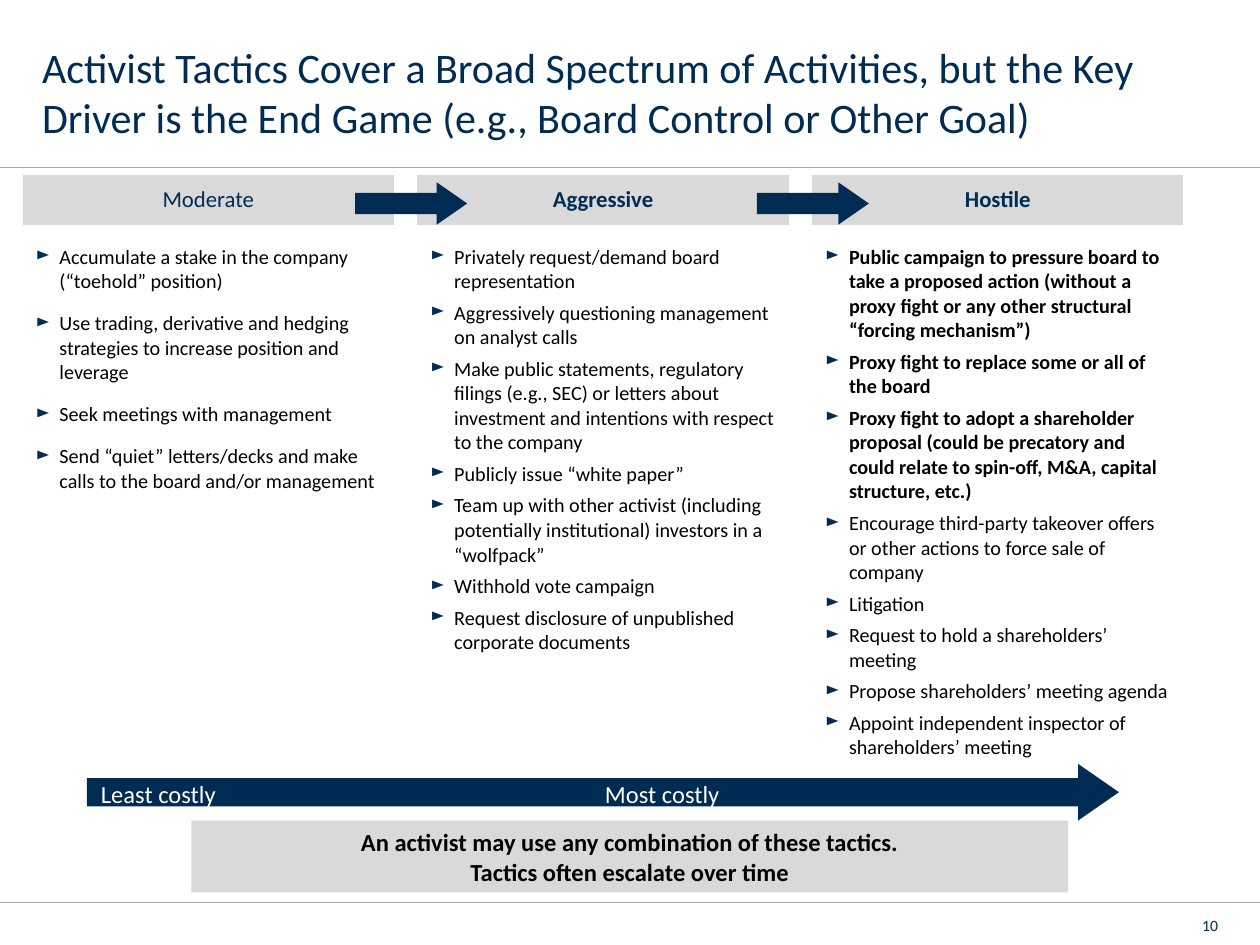
import dataclasses

import lxml.etree
import pptx
import pptx.dml.color
import pptx.enum.shapes
import pptx.enum.text
import pptx.oxml.ns
import pptx.util

Pt = pptx.util.Pt
Align = pptx.enum.text.PP_ALIGN
Anchor = pptx.enum.text.MSO_ANCHOR
Shapes = pptx.enum.shapes.MSO_SHAPE
qn = pptx.oxml.ns.qn

FONT = "Calibri"
COLORS = {"navy": "002C54", "gray": "D9D9D9", "rule": "A6A6A6", "black": "000000", "white": "FFFFFF"}
CELL_INSETS = (8, 4, 8, 4)


@dataclasses.dataclass(frozen=True)
class Box:
    left: float
    top: float
    width: float
    height: float

    def lengths(self) -> tuple:
        return tuple(Pt(value) for value in (self.left, self.top, self.width, self.height))


@dataclasses.dataclass(frozen=True)
class Style:
    size: float
    color: str
    bold: bool = False


@dataclasses.dataclass(frozen=True)
class Column:
    heading: str
    bullets: tuple[str, ...]
    heading_bold: bool = True
    bold_bullets: int = 0
    space_before: float = 0


COLUMNS = (
    Column("Moderate", (
        "Accumulate a stake in the company (“toehold” position)",
        "Use trading, derivative and hedging strategies to increase position and leverage",
        "Seek meetings with management",
        "Send “quiet” letters/decks and make calls to the board and/or management",
    ), heading_bold=False, space_before=6),
    Column("Aggressive", (
        "Privately request/demand board representation",
        "Aggressively questioning management on analyst calls",
        "Make public statements, regulatory filings (e.g., SEC) or letters about investment "
        "and intentions with respect to the company",
        "Publicly issue “white paper”",
        "Team up with other activist (including potentially institutional) investors in a “wolfpack”",
        "Withhold vote campaign",
        "Request disclosure of unpublished corporate documents",
    )),
    Column("Hostile", (
        "Public campaign to pressure board to take a proposed action (without a proxy fight "
        "or any other structural “forcing mechanism”)",
        "Proxy fight to replace some or all of the board",
        "Proxy fight to adopt a shareholder proposal (could be precatory and could relate to "
        "spin-off, M&A, capital structure, etc.)",
        "Encourage third-party takeover offers or other actions to force sale of company",
        "Litigation",
        "Request to hold a shareholders’ meeting",
        "Propose shareholders’ meeting agenda",
        "Appoint independent inspector of shareholders’ meeting",
    ), bold_bullets=3),
)


def color(name: str) -> pptx.dml.color.RGBColor:
    return pptx.dml.color.RGBColor.from_string(COLORS[name])


def add_run(paragraph, text: str, style: Style) -> None:
    run = paragraph.add_run()
    run.text = text
    run.font.name = FONT
    run.font.size = Pt(style.size)
    run.font.bold = style.bold
    run.font.color.rgb = color(style.color)


def set_insets(target, insets: tuple) -> None:
    target.margin_left, target.margin_top, target.margin_right, target.margin_bottom = map(Pt, insets)


def write_lines(frame, lines: tuple, style: Style, alignment, anchor, insets: tuple) -> None:
    frame.word_wrap = True
    frame.vertical_anchor = anchor
    set_insets(frame, insets)
    for index, line in enumerate(lines):
        paragraph = frame.add_paragraph() if index else frame.paragraphs[0]
        paragraph.alignment = alignment
        add_run(paragraph, line, style)


def add_rule(slide, top: float) -> None:
    line = slide.shapes.add_connector(
        pptx.enum.shapes.MSO_CONNECTOR.STRAIGHT, Pt(0), Pt(top), Pt(720), Pt(top))
    line.line.color.rgb = color("rule")
    line.line.width = Pt(0.5)
    lxml.etree.SubElement(line._element.spPr, qn("a:effectLst"))


def add_filled(slide, kind, box: Box, fill: str):
    shape = slide.shapes.add_shape(kind, *box.lengths())
    shape.shadow.inherit = False
    shape.fill.solid()
    shape.fill.fore_color.rgb = color(fill)
    shape.line.fill.background()
    return shape


def add_arrow(slide, box: Box):
    arrow = add_filled(slide, Shapes.RIGHT_ARROW, box, "navy")
    arrow.adjustments[0], arrow.adjustments[1] = 0.5, 0.72
    return arrow


def add_bullet(paragraph) -> None:
    properties = paragraph._p.get_or_add_pPr()
    properties.set("marL", str(Pt(13.5)))
    properties.set("indent", str(-Pt(13.5)))
    bullet_color = lxml.etree.SubElement(properties, qn("a:buClr"))
    lxml.etree.SubElement(bullet_color, qn("a:srgbClr"), val=COLORS["navy"])
    lxml.etree.SubElement(properties, qn("a:buSzPct"), val="90000")
    lxml.etree.SubElement(properties, qn("a:buChar"), char="►")


def fill_column(heading_cell, body_cell, column: Column) -> None:
    heading_cell.fill.solid()
    heading_cell.fill.fore_color.rgb = color("gray")
    heading_cell.vertical_anchor = Anchor.MIDDLE
    heading = heading_cell.text_frame.paragraphs[0]
    heading.alignment = Align.CENTER
    add_run(heading, column.heading, Style(13, "navy", column.heading_bold))
    for cell in (heading_cell, body_cell):
        set_insets(cell, CELL_INSETS)
    for index, text in enumerate(column.bullets):
        frame = body_cell.text_frame
        paragraph = frame.add_paragraph() if index else frame.paragraphs[0]
        paragraph.space_before = Pt(column.space_before if index else 0)
        paragraph.space_after = Pt(4)
        add_bullet(paragraph)
        add_run(paragraph, text, Style(11.5, "black", index < column.bold_bullets))


def add_tactics_table(slide) -> None:
    widths, heights = (213, 12.6, 213, 12.6, 213), (29.5, 7, 348)
    box = Box(12.5, 99.5, sum(widths), sum(heights))
    table = slide.shapes.add_table(len(heights), len(widths), *box.lengths()).table
    table.first_row = table.horz_banding = False
    for track, width in zip(table.columns, widths):
        track.width = Pt(width)
    for track, height in zip(table.rows, heights):
        track.height = Pt(height)
    for cell in table.iter_cells():
        cell.fill.background()
        set_insets(cell, (0, 0, 0, 0))
    for index, column in enumerate(COLUMNS):
        fill_column(table.cell(0, 2 * index), table.cell(2, 2 * index), column)
    for cell in table.iter_cells():
        if not cell.text:
            lxml.etree.SubElement(cell.text_frame.paragraphs[0]._p, qn("a:endParaRPr"), sz="100")


def main() -> None:
    """Build the slide on the spectrum of activist tactics."""
    presentation = pptx.Presentation()
    presentation.slide_width, presentation.slide_height = Pt(720), Pt(540)
    slide = presentation.slides.add_slide(presentation.slide_layouts[6])
    for top in (515.5, 95.8):
        add_rule(slide, top)

    title = slide.shapes.add_textbox(*Box(24, 20, 672, 73.5).lengths())
    write_lines(title.text_frame, (
        "Activist Tactics Cover a Broad Spectrum of Activities, but the Key "
        "Driver is the End Game (e.g., Board Control or Other Goal)",
    ), Style(24, "navy"), Align.LEFT, Anchor.TOP, (0, 3.6, 7.2, 3.6))
    number = slide.shapes.add_textbox(*Box(645, 519, 51, 15).lengths())
    write_lines(number.text_frame, ("10",), Style(9, "navy"), Align.RIGHT, Anchor.BOTTOM, (0, 0, 0, 0))

    add_tactics_table(slide)
    summary = add_filled(slide, Shapes.RECTANGLE, Box(109.4, 469, 501, 41), "gray")
    write_lines(summary.text_frame, (
        "An activist may use any combination of these tactics.", "Tactics often escalate over time",
    ), Style(14, "black", True), Align.CENTER, Anchor.MIDDLE, (0, 0, 0, 0))

    for left in (203, 432.5):
        add_arrow(slide, Box(left, 104.2, 64, 24.2))
    cost_arrow = add_arrow(slide, Box(49.7, 436.5, 589.7, 32.4))
    write_lines(cost_arrow.text_frame, ("Least costly" + "\t" * 7 + "Most costly",),
                Style(14, "white"), Align.LEFT, Anchor.TOP, CELL_INSETS)
    cost_arrow.text_frame.paragraphs[0].line_spacing = 0.8
    presentation.save("out.pptx")


if __name__ == "__main__":
    main()
